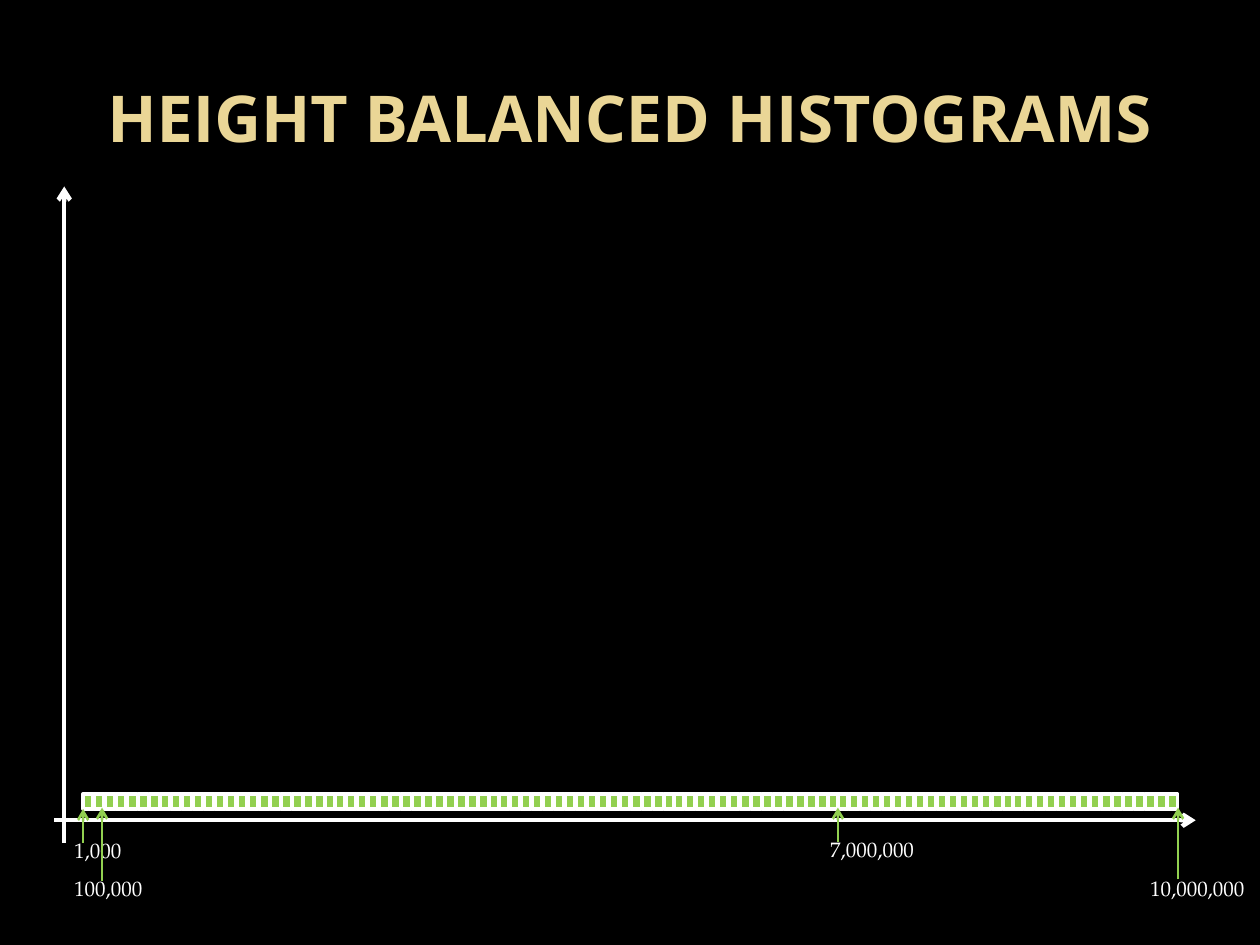
import pptx
import pptx.dml.color
import pptx.enum.shapes
import pptx.enum.text
import pptx.oxml.xmlchemy
import pptx.util

Inches = pptx.util.Inches
Pt = pptx.util.Pt

COLOURS = {
    "background": "000000",
    "title": "EAD696",
    "axis": "FFFFFF",
    "bar": "92D050",
}
TITLE_FONT = "Open Sans"
LABEL_FONT = "TeX Gyre Pagella"

BAR_TOP, BAR_WIDTH, BAR_HEIGHT = 6.3, 0.08, 0.12
BAR_STEP = 0.7 / 8
# Left edge of each run of bars and the number of bars in it
BAR_RUNS = [(0.66, 7)]
for block_left in (1.27, 3.96, 6.65):
    BAR_RUNS += [(block_left, 16), (block_left + 1.39, 15)]

# Value, label left, top and width, arrow x, arrow start and arrow tip
MARKERS = [
    ("1,000", 0.49, 6.6, 0.58, 0.66, 6.69, 6.42),
    ("100,000", 0.49, 6.9, 0.75, 0.81, 6.99, 6.41),
    ("7,000,000", 6.49, 6.59, 0.88, 6.65, 6.68, 6.41),
    ("10,000,000", 9.03, 6.9, 0.96, 9.35, 6.98, 6.41),
]


def rgb(name):
    return pptx.dml.color.RGBColor.from_string(COLOURS[name])


def write_text(frame, text, *, font, size, colour, bold=False, align=None):
    paragraph = frame.paragraphs[0]
    paragraph.alignment = align
    run = paragraph.add_run()
    run.text = text
    run.font.name = font
    run.font.size = Pt(size)
    run.font.bold = bold
    run.font.color.rgb = rgb(colour)


class HistogramSlide:
    def __init__(self, presentation):
        self.slide = presentation.slides.add_slide(presentation.slide_layouts[6])
        background = self.slide.background.fill
        background.solid()
        background.fore_color.rgb = rgb("background")

    def title(self, text, left, top, width, height):
        box = self.slide.shapes.add_textbox(
            Inches(left), Inches(top), Inches(width), Inches(height))
        frame = box.text_frame
        frame.word_wrap = True
        frame.vertical_anchor = pptx.enum.text.MSO_ANCHOR.MIDDLE
        write_text(frame, text, font=TITLE_FONT, size=36.9, colour="title",
                   bold=True, align=pptx.enum.text.PP_ALIGN.CENTER)

    def label(self, text, left, top, width):
        box = self.slide.shapes.add_textbox(
            Inches(left), Inches(top), Inches(width), Inches(0.3))
        frame = box.text_frame
        frame.word_wrap = False
        frame.auto_size = pptx.enum.text.MSO_AUTO_SIZE.SHAPE_TO_FIT_TEXT
        write_text(frame, text, font=LABEL_FONT, size=12, colour="axis")

    def arrow(self, start, tip, colour, weight):
        connector = self.slide.shapes.add_connector(
            pptx.enum.shapes.MSO_CONNECTOR.STRAIGHT,
            *(Inches(length) for length in (*start, *tip)))
        connector.line.color.rgb = rgb(colour)
        connector.line.width = Pt(weight)
        head = pptx.oxml.xmlchemy.OxmlElement("a:tailEnd")
        head.set("type", "arrow")
        connector.get_or_add_ln().append(head)
        no_shadow = pptx.oxml.xmlchemy.OxmlElement("a:effectLst")
        connector.element.spPr.append(no_shadow)

    def bar(self, left):
        bar = self.slide.shapes.add_shape(
            pptx.enum.shapes.MSO_SHAPE.RECTANGLE, Inches(left), Inches(BAR_TOP),
            Inches(BAR_WIDTH), Inches(BAR_HEIGHT))
        bar.shadow.inherit = False
        bar.fill.solid()
        bar.fill.fore_color.rgb = rgb("bar")
        bar.line.color.rgb = rgb("axis")
        bar.line.width = Pt(2)


def main():
    presentation = pptx.Presentation()
    presentation.slide_width = Inches(10)
    presentation.slide_height = Inches(7.5)
    histogram = HistogramSlide(presentation)

    histogram.title("HEIGHT BALANCED HISTOGRAMS", 0.5, 0.3, 9, 1.25)
    histogram.arrow((0.43, 6.51), (9.49, 6.51), "axis", 2.5)
    histogram.arrow((0.51, 6.69), (0.51, 1.48), "axis", 2.5)

    for run_left, count in BAR_RUNS:
        for index in range(count):
            histogram.bar(run_left + index * BAR_STEP)

    for value, left, top, width, x, start, tip in MARKERS:
        histogram.label(value, left, top, width)
        histogram.arrow((x, start), (x, tip), "bar", 1.5)

    presentation.save("out.pptx")


if __name__ == "__main__":
    main()
